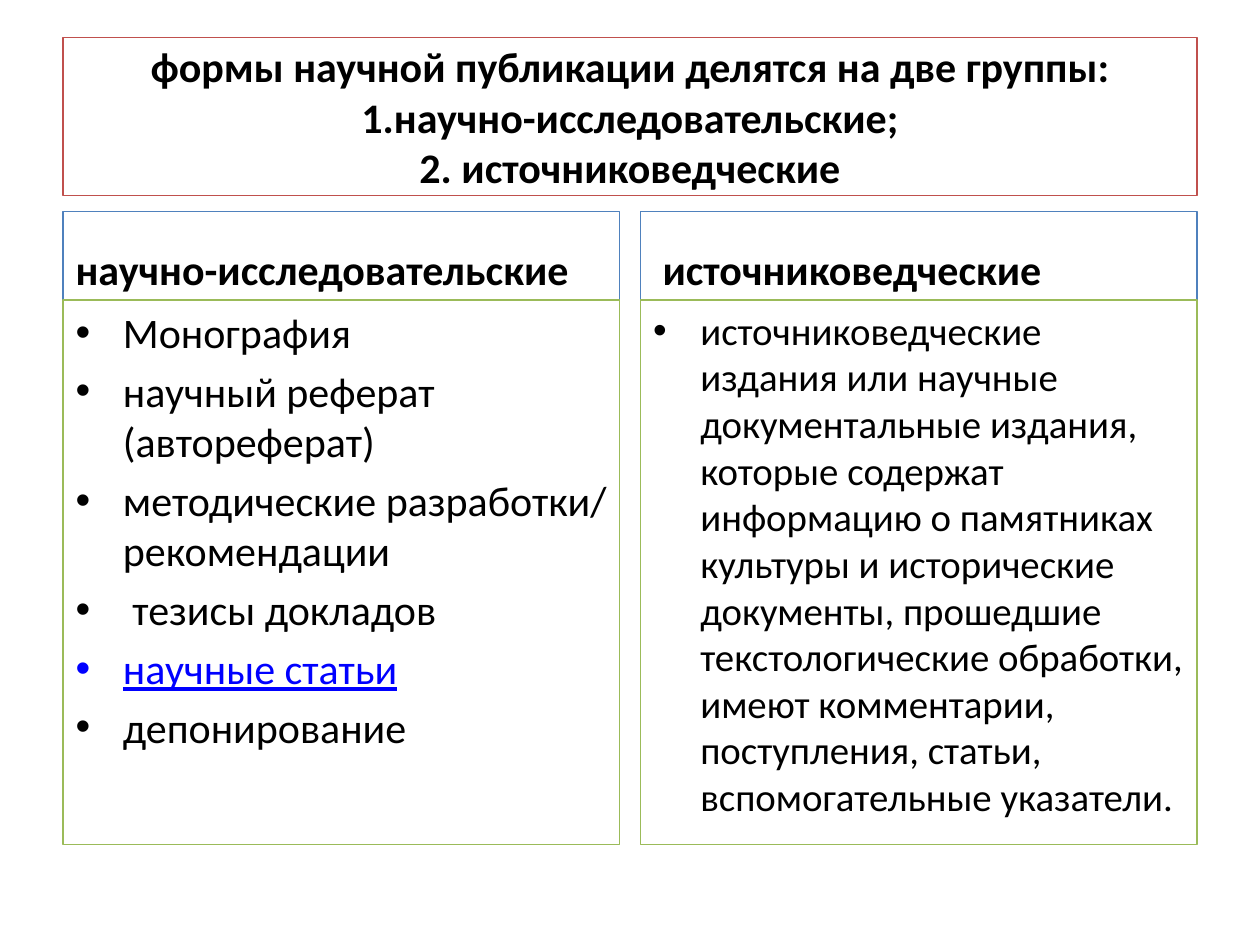
import pptx
import pptx.util
import pptx.dml.color
import pptx.enum.text
from pptx.util import Cm, Pt

RGBColor = pptx.dml.color.RGBColor
Anchor = pptx.enum.text.MSO_ANCHOR

BLACK = RGBColor(0x00, 0x00, 0x00)
LINK_BLUE = RGBColor(0x00, 0x00, 0xFF)
RED = RGBColor(0xC0, 0x50, 0x4D)
BLUE = RGBColor(0x4F, 0x81, 0xBD)
GREEN = RGBColor(0x9B, 0xBB, 0x59)

MARGIN = 1.27
CONTENT_WIDTH = 22.86
COLUMN_WIDTH = 11.22
TITLE_TOP, TITLE_HEIGHT = 0.76, 3.18
HEADING_TOP, HEADING_HEIGHT = 4.27, 1.78
LIST_TOP, LIST_HEIGHT = HEADING_TOP + HEADING_HEIGHT, 10.97

TITLE = "\v".join([
    "формы научной публикации делятся на две группы:",
    "1.научно-исследовательские;",
    "2. источниковедческие",
])
LINKED_ITEM = "научные статьи"
COLUMNS = [
    ("научно-исследовательские", 24, [
        "Монография",
        "научный реферат (автореферат)",
        "методические разработки/ рекомендации",
        " тезисы докладов",
        LINKED_ITEM,
        "депонирование",
    ]),
    (" источниковедческие", 22.2, [
        "источниковедческие издания или научные документальные издания, "
        "которые содержат информацию о памятниках культуры и исторические "
        "документы, прошедшие текстологические обработки, имеют комментарии, "
        "поступления, статьи, вспомогательные указатели.",
    ]),
]


def apply_format(target, values):
    for name, value in values.items():
        setattr(target, name, value)


class SlideBuilder:
    font_name = "Calibri"
    line_width = Pt(0.75)

    def __init__(self, slide):
        self.slide = slide

    def box(self, index, bounds, line_color, anchor):
        shape = self.slide.placeholders[index]
        names = ("left", "top", "width", "height")
        apply_format(shape, dict(zip(names, map(Cm, bounds))))
        shape.line.color.rgb = line_color
        shape.line.width = self.line_width
        apply_format(shape.text_frame, {
            "word_wrap": True,
            "auto_size": pptx.enum.text.MSO_AUTO_SIZE.NONE,
            "vertical_anchor": anchor,
        })
        return shape.text_frame

    def fill_paragraph(self, paragraph, text, size, bold=False, linked=False):
        paragraph.text = text
        for run in paragraph.runs:
            apply_format(run.font, {
                "name": self.font_name,
                "size": Pt(size),
                "bold": bold,
                "underline": linked,
            })
            run.font.color.rgb = LINK_BLUE if linked else BLACK

    def title(self, text, bounds):
        frame = self.box(0, bounds, RED, Anchor.MIDDLE)
        self.fill_paragraph(frame.paragraphs[0], text, 24, bold=True)

    def heading(self, index, text, bounds):
        frame = self.box(index, bounds, BLUE, Anchor.BOTTOM)
        self.fill_paragraph(frame.paragraphs[0], text, 24, bold=True)

    def bullet_list(self, index, items, size, bounds):
        frame = self.box(index, bounds, GREEN, Anchor.TOP)
        for position, item in enumerate(items):
            paragraph = frame.add_paragraph() if position else frame.paragraphs[0]
            self.fill_paragraph(paragraph, item, size, linked=item == LINKED_ITEM)


def main():
    presentation = pptx.Presentation()
    presentation.slide_width = Cm(25.4)
    presentation.slide_height = Cm(19.05)
    comparison_layout = presentation.slide_layouts[4]
    builder = SlideBuilder(presentation.slides.add_slide(comparison_layout))

    builder.title(TITLE, (MARGIN, TITLE_TOP, CONTENT_WIDTH, TITLE_HEIGHT))
    for column, (heading, size, items) in enumerate(COLUMNS):
        left = MARGIN + column * (CONTENT_WIDTH - COLUMN_WIDTH)
        index = 1 + 2 * column
        builder.heading(index, heading, (left, HEADING_TOP, COLUMN_WIDTH, HEADING_HEIGHT))
        builder.bullet_list(index + 1, items, size, (left, LIST_TOP, COLUMN_WIDTH, LIST_HEIGHT))

    presentation.save("out.pptx")


if __name__ == "__main__":
    main()
